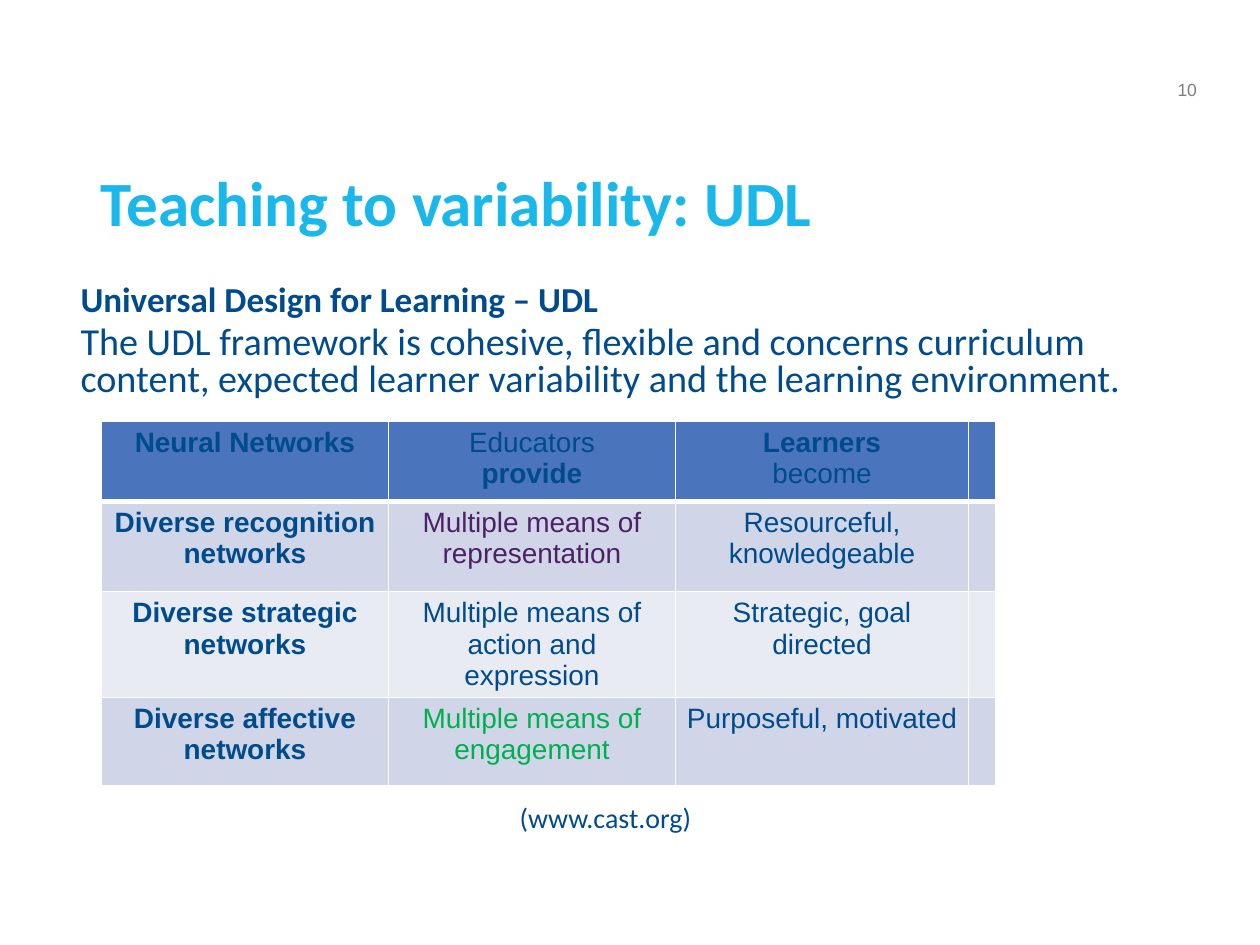
from lxml import etree
from pptx import Presentation
from pptx.dml.color import RGBColor
from pptx.enum.text import MSO_ANCHOR, MSO_AUTO_SIZE, PP_ALIGN
from pptx.oxml.ns import qn
from pptx.util import Pt

TOP, NO_FIT = MSO_ANCHOR.TOP, MSO_AUTO_SIZE.NONE
LEFT, CENTER, RIGHT = PP_ALIGN.LEFT, PP_ALIGN.CENTER, PP_ALIGN.RIGHT
COLORS = {
    "title": "1AB7EA", "text": "004B8D", "number": "7E7E7E",
    "purple": "4C2267", "green": "00B050", "line": "FFFFFF",
    "header": "4A74BB", "band": "D0D6E7", "plain": "E9EBF3",
}


def add_text(sp, box, lines, font, color, align=LEFT, spacing=1.0):
    sp.left, sp.top, sp.width, sp.height = [Pt(v) for v in box]
    tf = sp.text_frame
    tf.word_wrap, tf.auto_size, tf.vertical_anchor = True, NO_FIT, TOP
    tf.margin_left = tf.margin_right = tf.margin_top = tf.margin_bottom = 0
    tf.text = "\n".join(text for text, size, bold in lines)
    for i, (p, (text, size, bold)) in enumerate(zip(tf.paragraphs, lines)):
        pPr = p._p.get_or_add_pPr()
        pPr.set("marL", "0")
        pPr.set("indent", "0")
        etree.SubElement(pPr, qn("a:buNone"))
        p.alignment, p.line_spacing = align, spacing
        p.space_before = Pt(4 if i else 0)
        f = p.runs[0].font
        f.name, f.size, f.bold = font, Pt(size), bold
        f.color.rgb = RGBColor.from_string(COLORS[color])


def add_borders(cell, bottom):
    tcPr = cell._tc.get_or_add_tcPr()
    for side, width in (("L", 1), ("R", 1), ("T", 1), ("B", bottom)):
        ln = etree.SubElement(tcPr, qn("a:ln" + side), w=str(Pt(width)))
        fill = etree.SubElement(ln, qn("a:solidFill"))
        etree.SubElement(fill, qn("a:srgbClr"), val=COLORS["line"])


prs = Presentation()
prs.slide_width, prs.slide_height = Pt(720), Pt(540)
s = prs.slides.add_slide(prs.slide_layouts[1])

add_text(s.shapes.title, (57.6, 98.6, 617.8, 51.8),
         [("Teaching to variability: UDL", 36, True)], "Calibri", "title", spacing=0.9)
add_text(s.placeholders[1], (46, 163.4, 638, 72), [
    ("Universal Design for Learning – UDL", 20, True),
    ("The UDL framework is cohesive, flexible and concerns curriculum content, "
     "expected learner variability and the learning environment.", 21.8, False),
], "Calibri", "text", spacing=0.8)

number = s.shapes.add_textbox(0, 0, 0, 0)
add_text(number, (652.3, 45.4, 31.7, 18), [("10", 10, False)], "Arial", "number", RIGHT)
source = s.shapes.add_textbox(0, 0, 0, 0)
add_text(source, (286, 457.5, 120, 20), [("(www.cast.org)", 16, False)],
         "Calibri", "text", CENTER)

rows = [
    ["Neural Networks", "Educators\nprovide", "Learners\nbecome", ""],
    ["Diverse recognition networks", "Multiple means of representation",
     "Resourceful, knowledgeable", ""],
    ["Diverse strategic networks", "Multiple means of action and expression",
     "Strategic, goal directed", ""],
    ["Diverse affective networks", "Multiple means of engagement",
     "Purposeful, motivated", ""],
]
bold_texts = {"provide", "Learners"} | {row[0] for row in rows}
accents = {(1, 1): "purple", (3, 1): "green"}
fills = ["header", "band", "plain", "band"]
widths = [164, 164, 167.5, 15.5]
heights = [46, 51.5, 60, 50.5]

table = s.shapes.add_table(4, 4, Pt(58), Pt(240.5), Pt(sum(widths)), Pt(sum(heights))).table
for col, width in zip(table.columns, widths):
    col.width = Pt(width)
for r, row in enumerate(rows):
    table.rows[r].height = Pt(heights[r])
    for c, text in enumerate(row):
        cell = table.cell(r, c)
        cell.margin_left = cell.margin_right = Pt(6.5)
        cell.margin_top = cell.margin_bottom = Pt(3.6)
        add_borders(cell, 1 if r else 3)
        cell.fill.solid()
        cell.fill.fore_color.rgb = RGBColor.from_string(COLORS[fills[r]])
        cell.text = text
        for p in cell.text_frame.paragraphs:
            p.alignment = CENTER
            for run in p.runs:
                f = run.font
                f.name, f.size, f.bold = "Arial", Pt(16), run.text in bold_texts
                f.color.rgb = RGBColor.from_string(COLORS[accents.get((r, c), "text")])

prs.save("out.pptx")
